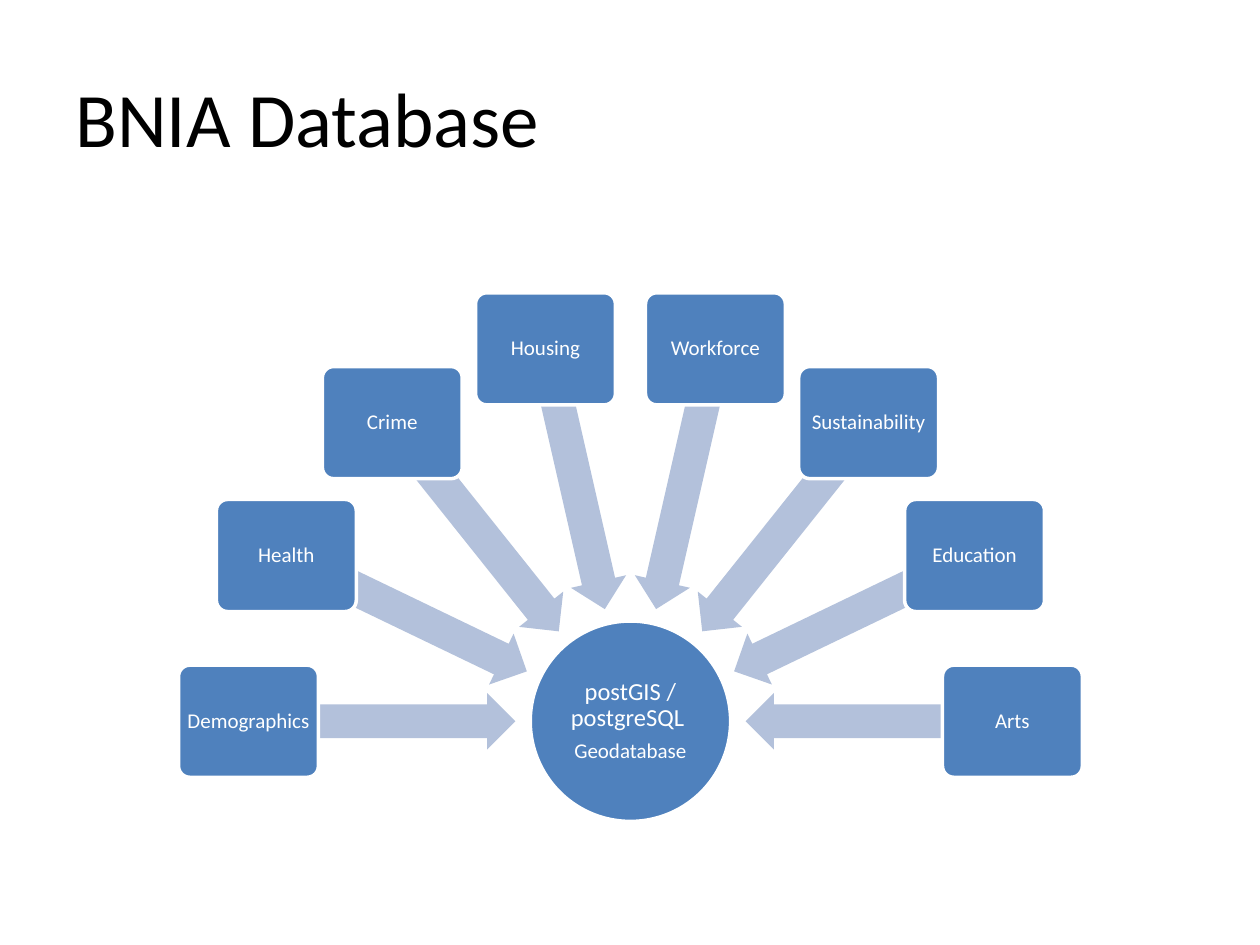
"""Build the BNIA Database slide: eight topics feeding a central geodatabase."""
import math

from pptx import Presentation, util as u
from pptx.dml.color import RGBColor
from pptx.enum import shapes, text

Cm, Pt = u.Cm, u.Pt
MSO = shapes.MSO_SHAPE
BLUE, PALE, WHITE, BLACK = "4F81BD", "B3C1DB", "FFFFFF", "000000"
CX, CY = 12.71, 14.54
BOX_RADIUS, ARROW_RADIUS = 7.7, 5
TOPICS = ["Demographics", "Health", "Crime", "Housing",
          "Workforce", "Sustainability", "Education", "Arts"]


def add_centred(kind, x, y, w, h, fill, line=None):
    sp = s.shapes.add_shape(kind, Cm(x - w / 2), Cm(y - h / 2), Cm(w), Cm(h))
    sp.shadow.inherit = False
    sp.fill.solid()
    sp.fill.fore_color.rgb = RGBColor.from_string(fill)
    if line:
        sp.line.color.rgb = RGBColor.from_string(line)
        sp.line.width = Pt(2)
    else:
        sp.line.fill.background()
    return sp


def write(sp, lines, color, align, margin, spacing=None):
    tf = sp.text_frame
    frame = {"word_wrap": True, "vertical_anchor": text.MSO_ANCHOR.MIDDLE}
    for side in ("left", "right", "top", "bottom"):
        frame[f"margin_{side}"] = Cm(margin)
    for name, value in frame.items():
        setattr(tf, name, value)
    for i, (words, size) in enumerate(lines):
        p = tf.add_paragraph() if i else tf.paragraphs[0]
        p.alignment = align
        if spacing:
            p.line_spacing = spacing
            p.space_after = Pt(round(0.35 * size, 1))
        r = p.add_run()
        r.text = words
        for name, value in {"name": "Calibri", "size": Pt(size)}.items():
            setattr(r.font, name, value)
        r.font.color.rgb = RGBColor.from_string(color)


prs = Presentation()
prs.slide_width, prs.slide_height = Cm(25.4), Cm(19.05)
s = prs.slides.add_slide(prs.slide_layouts[5])

title = s.shapes.title
place = {"left": 1.27, "top": 0.76, "width": 22.86, "height": 3.18}
for name, value in place.items():
    setattr(title, name, Cm(value))
write(title, [("BNIA Database", 44)], BLACK, text.PP_ALIGN.LEFT, 0.25)

hub = add_centred(MSO.OVAL, CX, CY, 4.04, 4.04, BLUE, WHITE)
write(hub, [("postGIS / postgreSQL ", 14), ("Geodatabase", 12)],
      WHITE, text.PP_ALIGN.CENTER, 0.03, 0.9)

for i, topic in enumerate(TOPICS):
    turn = 180 + i * 180 / (len(TOPICS) - 1)
    dx, dy = math.cos(math.radians(turn)), math.sin(math.radians(turn))

    arrow = add_centred(MSO.LEFT_ARROW, CX + ARROW_RADIUS * dx,
                        CY + ARROW_RADIUS * dy, 5.36, 1.14, PALE)
    arrow.rotation = turn % 360
    arrow.adjustments[0], arrow.adjustments[1] = 0.6, 0.5

    box = add_centred(MSO.ROUNDED_RECTANGLE, CX + BOX_RADIUS * dx,
                      CY + BOX_RADIUS * dy, 2.82, 2.26, BLUE, WHITE)
    box.adjustments[0] = 0.1
    write(box, [(topic, 12)], WHITE, text.PP_ALIGN.CENTER, 0.07, 0.9)

prs.save("out.pptx")
